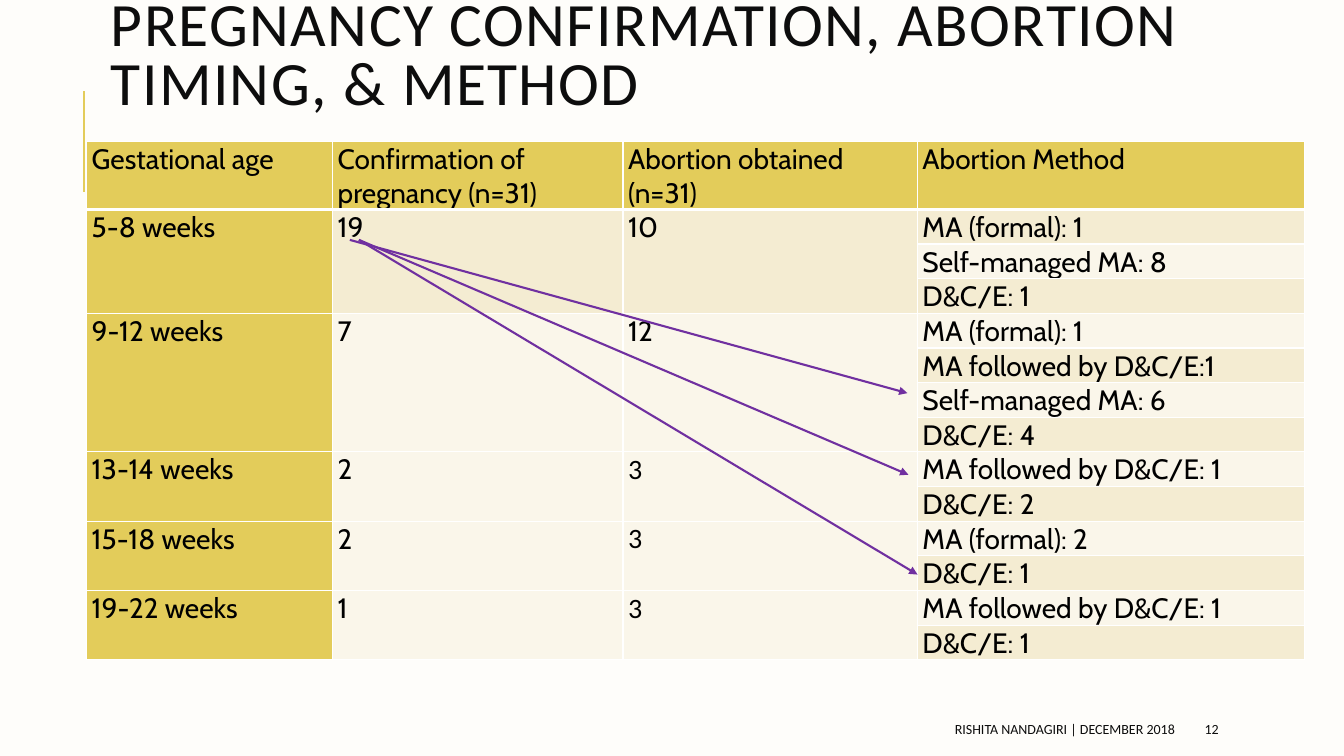
from lxml import etree
from pptx import Presentation
from pptx.dml.color import RGBColor
from pptx.enum import shapes, text
from pptx.oxml import ns
from pptx.util import Inches, Pt

COLOURS = {
    "page": "FEFDFA", "gold": "E3CC5A", "dark band": "F4ECD2", "light band": "FAF6EA",
    "border": "FFFFFF", "ink": "0D0D0D", "cell ink": "000000", "arrow": "7030A0",
}
HEADINGS = ["Gestational age", "Confirmation of pregnancy (n=31)",
            "Abortion obtained (n=31)", "Abortion Method"]
# Age, confirmations, abortions, font of the abortion count, methods
AGE_GROUPS = [
    ("5-8 weeks", "19", "10", "Cabin",
     ["MA (formal): 1", "Self-managed MA: 8", "D&C/E: 1"]),
    ("9-12 weeks", "7", "12", "Cabin",
     ["MA (formal): 1", "MA followed by D&C/E:1", "Self-managed MA: 6", "D&C/E: 4"]),
    ("13-14 weeks", "2", "3", "Calibri", ["MA followed by D&C/E: 1", "D&C/E: 2"]),
    ("15-18 weeks", "2", "3", "Calibri", ["MA (formal): 2", "D&C/E: 1"]),
    ("19-22 weeks", "1", "3", "Calibri", ["MA followed by D&C/E: 1", "D&C/E: 1"]),
]
COLUMN_WIDTHS = [2.44, 2.88, 2.92, 3.84]
ROW_HEIGHTS = [0.57, 0.29, 0.31, 0.29, 0.29, 0.31, 0.31,
               0.29, 0.31, 0.29, 0.29, 0.29, 0.31, 0.29]


def colour(name):
    return RGBColor.from_string(COLOURS[name])


def write(frame, words, size=20, font="Cabin", ink="cell ink",
          align=text.PP_ALIGN.LEFT, line_spacing=None, tracking=None):
    """Put one formatted paragraph in a text frame."""
    para = frame.paragraphs[0]
    para.alignment = align
    if line_spacing:
        para.line_spacing = line_spacing
    span = para.add_run()
    span.text = words
    span.font.size = Pt(size)
    span.font.name = font
    span.font.bold = False
    span.font.color.rgb = colour(ink)
    if tracking:
        span.font._element.set("spc", str(tracking * 100))


class SlideBuilder:
    def __init__(self, deck):
        self.slide = deck.slides.add_slide(deck.slide_layouts[5])
        self.slide.background.fill.solid()
        self.slide.background.fill.fore_color.rgb = colour("page")

    def title(self, words, left, top, width, height):
        box = self.slide.shapes.title
        box.left, box.top = Inches(left), Inches(top)
        box.width, box.height = Inches(width), Inches(height)
        frame = box.text_frame
        frame.word_wrap = True
        frame.auto_size = text.MSO_AUTO_SIZE.NONE
        frame.vertical_anchor = text.MSO_ANCHOR.MIDDLE
        write(frame, words, size=44, font="Calibri", ink="ink", line_spacing=0.8, tracking=1)

    def footer(self, words, left, width, align):
        box = self.slide.shapes.add_textbox(
            Inches(left), Inches(7.08), Inches(width), Inches(0.3))
        box.text_frame.word_wrap = True
        box.text_frame.vertical_anchor = text.MSO_ANCHOR.MIDDLE
        write(box.text_frame, words, size=10, font="Calibri", ink="ink", align=align)

    def line(self, start, end, ink, arrow=False):
        points = [Inches(value) for value in (*start, *end)]
        line = self.slide.shapes.add_connector(shapes.MSO_CONNECTOR.STRAIGHT, *points)
        line.line.color.rgb = colour(ink)
        line.line.width = Pt(1.5)
        if arrow:
            etree.SubElement(line.line._get_or_add_ln(), ns.qn("a:tailEnd"), type="triangle")
        etree.SubElement(line._element.spPr, ns.qn("a:effectLst"))

    def table(self, left, top, width, height):
        holder = self.slide.shapes.add_table(
            len(ROW_HEIGHTS), len(COLUMN_WIDTHS),
            Inches(left), Inches(top), Inches(width), Inches(height))
        grid = holder.table
        for column, size in zip(grid.columns, COLUMN_WIDTHS):
            column.width = Inches(size)
        for row, size in zip(grid.rows, ROW_HEIGHTS):
            row.height = Inches(size)
        holder.height = Inches(height)
        return grid

    def style_cell(self, cell, fill, top=1, bottom=1):
        cell.margin_left = cell.margin_right = Inches(0.05)
        cell.margin_top, cell.margin_bottom = Inches(0.01), 0
        properties = cell._tc.get_or_add_tcPr()
        for side, points in (("L", 1), ("R", 1), ("T", top), ("B", bottom)):
            edge = etree.SubElement(properties, ns.qn(f"a:ln{side}"), w=str(Pt(points)))
            paint = etree.SubElement(edge, ns.qn("a:solidFill"))
            etree.SubElement(paint, ns.qn("a:srgbClr"), val=COLOURS["border"])
        cell.fill.solid()
        cell.fill.fore_color.rgb = colour(fill)


def main():
    deck = Presentation()
    deck.slide_width, deck.slide_height = Inches(13.33), Inches(7.5)
    builder = SlideBuilder(deck)

    # Accent line, title and footer
    builder.line((0.83, 1.9), (0.83, 0.9), "gold")
    builder.title("PREGNANCY CONFIRMATION, ABORTION TIMING, & METHOD", 1, -0.24, 11.8, 1.64)
    builder.footer("12", 11.85, 1.06, text.PP_ALIGN.LEFT)
    builder.footer("RISHITA NANDAGIRI | DECEMBER 2018", 5.3, 6.45, text.PP_ALIGN.RIGHT)

    # Table fills: gold heading row and first column, then alternating bands
    grid = builder.table(0.86, 1.4, 12.08, 5.1)
    group_start = 1
    for column, heading in enumerate(HEADINGS):
        cell = grid.cell(0, column)
        builder.style_cell(cell, "gold", bottom=3)
        write(cell.text_frame, heading)
    for age, confirmed, obtained, font, methods in AGE_GROUPS:
        for row, method in enumerate(methods, group_start):
            for column in range(len(HEADINGS)):
                band_row = row if column == 3 else group_start
                band = "dark band" if band_row % 2 else "light band"
                builder.style_cell(grid.cell(row, column), band if column else "gold",
                                   top=3 if row == 1 else 1)
            write(grid.cell(row, 3).text_frame, method)
        # The first three columns span the whole age group
        for column, words in enumerate((age, confirmed, obtained)):
            cell = grid.cell(group_start, column)
            cell.merge(grid.cell(group_start + len(methods) - 1, column))
            write(cell.text_frame, words, font=font if column == 2 else "Cabin")
        group_start += len(methods)

    # Arrows from early confirmation to later methods
    for start, end in (((3.47, 2.38), (9, 3.9)),
                       ((3.56, 2.38), (9.01, 4.71)),
                       ((3.56, 2.38), (9.1, 5.7))):
        builder.line(start, end, "arrow", arrow=True)

    deck.save("out.pptx")


if __name__ == "__main__":
    main()
